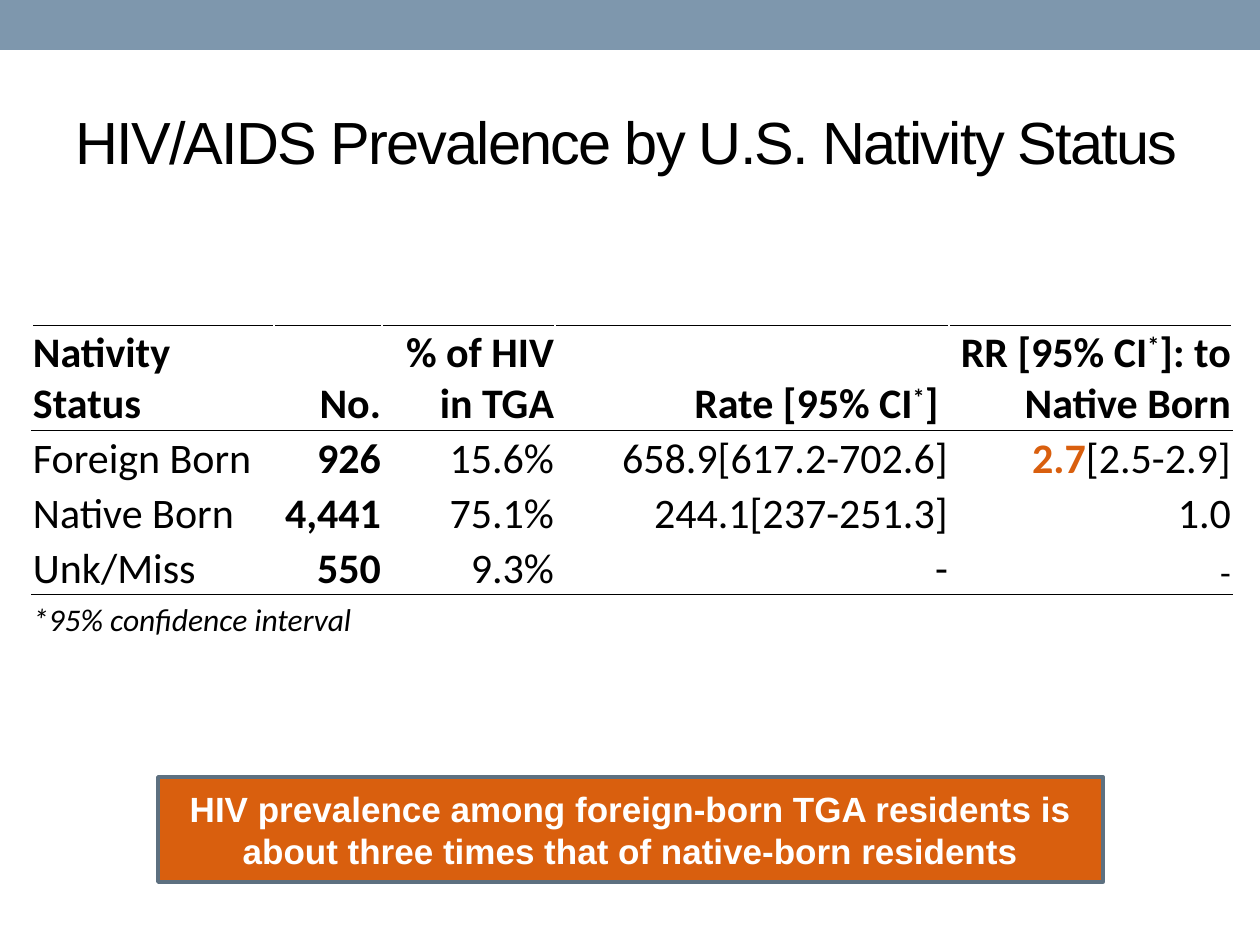
from pptx import Presentation
from pptx.dml.color import RGBColor
from pptx.enum.shapes import MSO_SHAPE as Shape
from pptx.enum.text import MSO_ANCHOR as Anchor, PP_ALIGN as Align
from pptx.oxml.ns import qn
from pptx.util import Pt
from lxml.etree import SubElement

PX = 914400 / 126
COLORS = {
    "band": "7E97AD",
    "accent": "D95F0E",
    "outline": "5D7080",
    "text": "000000",
    "white": "FFFFFF",
}
COLUMN_WIDTHS = [242, 108, 173, 394, 283]
ROW_HEIGHTS = [105, 55, 55, 55, 45]
RULES = {0: ["lnT", "lnB"], 1: ["lnT"], 3: ["lnB"], 4: ["lnT"]}
ROWS = [
    ["Nativity Status", "No.", "% of HIV in TGA",
     ["Rate [95% CI", "*", "] "], ["RR [95% CI", "*", "]: to Native Born"]],
    ["Foreign Born", "926", "15.6%", "658.9[617.2-702.6]", ["2.7", "[2.5-2.9]"]],
    ["Native Born", "4,441", "75.1%", "244.1[237-251.3]", "1.0"],
    ["Unk/Miss", "550", "9.3%", "-", "-"],
]
FOOTNOTE = "*95% confidence interval"


def px(value):
    return round(value * PX)


def color(name):
    return RGBColor.from_string(COLORS[name])


def format_run(run, font, size, color_name="text", bold=False):
    run.font.name = font
    run.font.size = Pt(size)
    run.font.bold = bold
    run.font.color.rgb = color(color_name)


def add_box(slide, box, fill):
    shape = slide.shapes.add_shape(Shape.RECTANGLE, *map(px, box))
    shape.shadow.inherit = False
    shape.fill.solid()
    shape.fill.fore_color.rgb = color(fill)
    shape.line.fill.background()
    return shape


def add_title(slide, box, text):
    text_frame = slide.shapes.add_textbox(*map(px, box)).text_frame
    text_frame.word_wrap = True
    text_frame.vertical_anchor = Anchor.MIDDLE
    text_frame.text = text
    run = text_frame.paragraphs[0].runs[0]
    format_run(run, "Arial", 34)
    run.font._element.set("spc", "-100")


def add_callout(slide, box, text):
    shape = add_box(slide, box, "accent")
    shape.line.color.rgb = color("outline")
    shape.line.width = Pt(2.08)
    text_frame = shape.text_frame
    text_frame.word_wrap = True
    text_frame.vertical_anchor = Anchor.MIDDLE
    text_frame.text = text
    paragraph = text_frame.paragraphs[0]
    paragraph.alignment = Align.CENTER
    format_run(paragraph.runs[0], "Arial", 20, "white", True)


def style_cell(cell, rules):
    cell.margin_left = cell.margin_right = cell.margin_top = px(1)
    cell.margin_bottom = 0
    cell.vertical_anchor = Anchor.BOTTOM
    properties = cell._tc.get_or_add_tcPr()
    for tag in rules:
        line = SubElement(properties, qn(f"a:{tag}"), w=str(Pt(0.5)))
        fill = SubElement(line, qn("a:solidFill"))
        SubElement(fill, qn("a:srgbClr"), val=COLORS["text"])
    cell.fill.background()


def fill_cell(cell, content, row, column):
    paragraph = cell.text_frame.paragraphs[0]
    paragraph.alignment = Align.RIGHT if column else Align.LEFT
    for part in [content] if isinstance(content, str) else content:
        run = paragraph.add_run()
        run.text = part
        highlighted = part == "2.7"
        size = 20 if (row, column) == (3, 4) else 24
        format_run(run, "Calibri", size, "accent" if highlighted else "text",
                   row == 0 or column == 1 or highlighted)
        if part == "*":
            run.font._element.set("baseline", "30000")


def add_prevalence_table(slide, left, top):
    box = (left, top, sum(COLUMN_WIDTHS), sum(ROW_HEIGHTS))
    table = slide.shapes.add_table(
        len(ROW_HEIGHTS), len(COLUMN_WIDTHS), *map(px, box)).table
    table.first_row = table.horz_banding = False
    for column, width in zip(table.columns, COLUMN_WIDTHS):
        column.width = px(width)
    for index, height in enumerate(ROW_HEIGHTS):
        table.rows[index].height = px(height)
        for cell in table.rows[index].cells:
            style_cell(cell, RULES.get(index, []))
    for row, contents in enumerate(ROWS):
        for column, content in enumerate(contents):
            fill_cell(table.cell(row, column), content, row, column)
    last = len(ROWS)
    footnote = table.cell(last, 0)
    footnote.merge(table.cell(last, len(COLUMN_WIDTHS) - 1))
    footnote.text_frame.text = FOOTNOTE
    run = footnote.text_frame.paragraphs[0].runs[0]
    format_run(run, "Calibri", 18)
    run.font.italic = True


def main():
    presentation = Presentation()
    presentation.slide_width = px(1260)
    presentation.slide_height = px(945)
    slide = presentation.slides.add_slide(presentation.slide_layouts[6])
    add_box(slide, (0, 0, 1260, 50), "band")
    add_title(slide, (63, 73, 1134, 136),
              "HIV/AIDS Prevalence by U.S. Nativity Status")
    add_callout(slide, (158, 777, 945, 105),
                "HIV prevalence among foreign-born TGA residents is "
                "about three times that of native-born residents")
    add_prevalence_table(slide, 32, 325)
    presentation.save("out.pptx")


if __name__ == "__main__":
    main()
